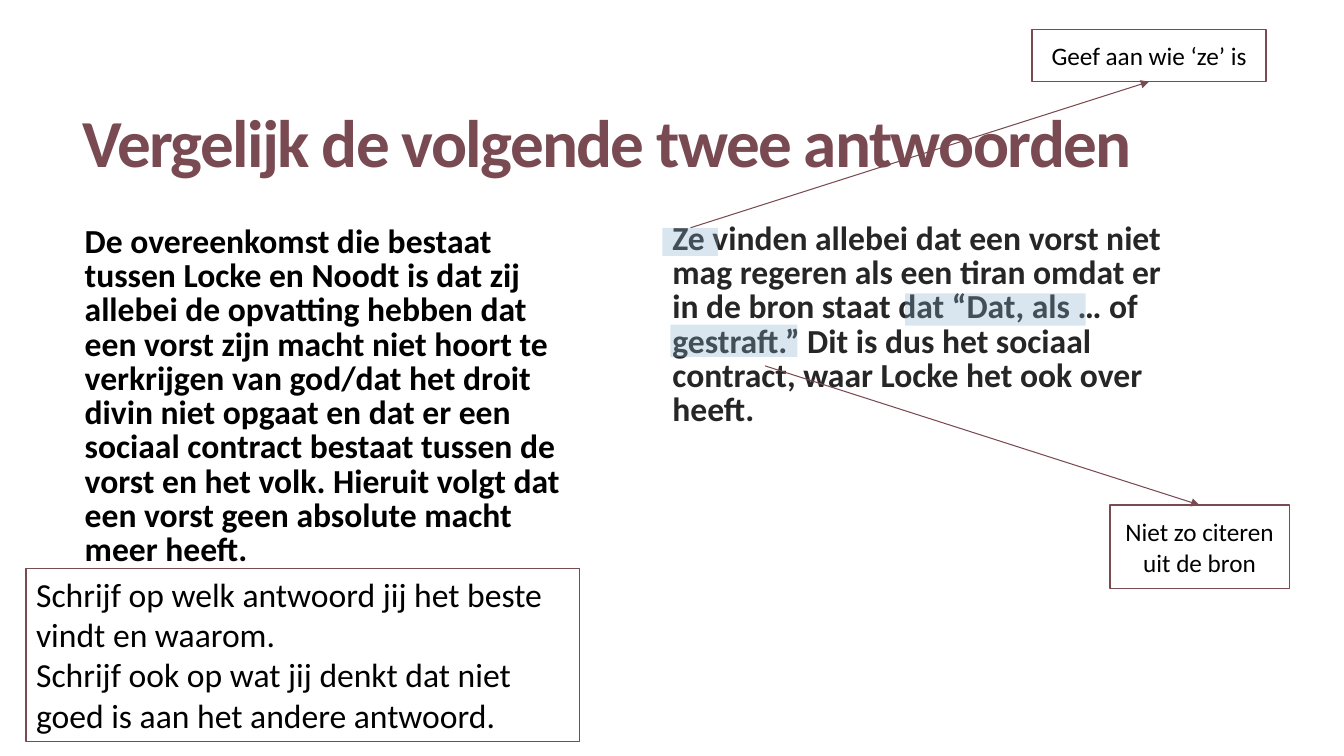
"""Build a slide that compares two pupil answers with teacher notes."""
from lxml import etree
from pptx import Presentation
from pptx.dml.color import RGBColor
from pptx.enum.shapes import MSO_CONNECTOR, MSO_SHAPE
from pptx.enum.text import MSO_ANCHOR, MSO_AUTO_SIZE, PP_ALIGN
from pptx.oxml.ns import qn
from pptx.util import Inches, Pt

RECTANGLE, STRAIGHT = MSO_SHAPE.RECTANGLE, MSO_CONNECTOR.STRAIGHT
TOP, MIDDLE = MSO_ANCHOR.TOP, MSO_ANCHOR.MIDDLE
LEFT, CENTER = PP_ALIGN.LEFT, PP_ALIGN.CENTER
NO_FIT = MSO_AUTO_SIZE.NONE
THEME = {
    "font": "Calibri", "accent": "794A51", "highlight": "83AECB", "paper": "FFFFFF",
    "ink": "000000", "soft_ink": "262626", "title": 48, "body": 24, "note": 18,
}

deck = Presentation()
deck.slide_width, deck.slide_height = Inches(13.333), Inches(7.5)
slide = deck.slides.add_slide(deck.slide_layouts[3])


def share(x, y, *size):
    """Turn percentages of the slide's width and height into lengths."""
    sides = (deck.slide_width, deck.slide_height) * 2
    return [round(side * part / 100) for side, part in zip(sides, (x, y, *size))]


def write(holder, *lines, size, color="ink", bold=False, align=LEFT, anchor=TOP,
          leading=None, tracking=0):
    """Fill a shape with formatted paragraphs."""
    frame = holder.text_frame
    frame.word_wrap, frame.auto_size, frame.vertical_anchor = True, NO_FIT, anchor
    frame.text = "\n".join(lines)
    for paragraph in frame.paragraphs:
        paragraph.alignment, paragraph.line_spacing = align, leading
        paragraph.space_before = Pt(0)
        properties = paragraph._p.get_or_add_pPr()
        properties.set("marL", "0")
        properties.set("indent", "0")
        etree.SubElement(properties, qn("a:buNone"))
        for run in paragraph.runs:
            font = run.font
            font.name, font.size, font.bold = THEME["font"], Pt(THEME[size]), bold
            font.color.rgb = RGBColor.from_string(THEME[color])
            if tracking:
                run._r.get_or_add_rPr().set("spc", str(tracking))


title, first_answer, second_answer = slide.placeholders
areas = [(5.4, 7.33, 88.35, 24.13), (5.55, 29.2, 38.25, 54.93), (49.28, 28.8, 38.25, 54.93)]
for holder, area in zip((title, first_answer, second_answer), areas):
    holder.left, holder.top, holder.width, holder.height = share(*area)

write(title, "Vergelijk de volgende twee antwoorden", size="title", color="accent",
      bold=True, anchor=MIDDLE, leading=0.85, tracking=-120)
write(first_answer,
      "De overeenkomst die bestaat tussen Locke en Noodt is dat zij allebei de opvatting "
      "hebben dat een vorst zijn macht niet hoort te verkrijgen van god/dat het droit divin "
      "niet opgaat en dat er een sociaal contract bestaat tussen de vorst en het volk. "
      "Hieruit volgt dat een vorst geen absolute macht meer heeft.",
      size="body", bold=True, leading=0.85)
write(second_answer,
      "Ze vinden allebei dat een vorst niet mag regeren als een tiran omdat er in de bron "
      "staat dat “Dat, als … of gestraft.” Dit is dus het sociaal contract, waar Locke het "
      "ook over heeft.",
      size="body", color="soft_ink", bold=True, leading=0.85)

highlights = [(49.28, 30.13, 4.13, 3.73), (67.35, 38.8, 13.43, 4.27), (49.88, 42.93, 9.45, 4.27)]
for area in highlights:
    marker = slide.shapes.add_shape(RECTANGLE, *share(*area))
    marker.shadow.inherit = False
    marker.fill.solid()
    marker.fill.fore_color.rgb = RGBColor.from_string(THEME["highlight"])
    tint = marker._element.spPr.find(".//" + qn("a:srgbClr"))
    etree.SubElement(tint, qn("a:alpha"), val="30000")
    marker.line.fill.background()

task = ["Schrijf op welk antwoord jij het beste vindt en waarom.",
        "Schrijf ook op wat jij denkt dat niet goed is aan het andere antwoord."]
boxes = [
    ((1.95, 75.2, 41.18, 22.93), task, {"size": "body"}),
    ((76.8, 3.87, 17.4, 6.93), ["Geef aan wie ‘ze’ is"],
     {"size": "note", "align": CENTER, "anchor": MIDDLE}),
    ((82.58, 66.8, 13.35, 11.07), ["Niet zo citeren uit de bron"],
     {"size": "note", "align": CENTER, "anchor": MIDDLE}),
]
for area, lines, style in boxes:
    box = slide.shapes.add_shape(RECTANGLE, *share(*area))
    box.shadow.inherit = False
    box.fill.solid()
    box.fill.fore_color.rgb = RGBColor.from_string(THEME["paper"])
    box.line.color.rgb = RGBColor.from_string(THEME["accent"])
    box.line.width = Pt(1)
    write(box, *lines, **style)

arrows = [((51.38, 30.13), (85.5, 10.8)), ((56.93, 48.4), (89.25, 66.8))]
for remark, note in arrows:
    arrow = slide.shapes.add_connector(STRAIGHT, *share(*remark), *share(*note))
    arrow.line.color.rgb = RGBColor.from_string(THEME["accent"])
    arrow.line.width = Pt(0.75)
    etree.SubElement(arrow.line._get_or_add_ln(), qn("a:tailEnd"), type="triangle")
    etree.SubElement(arrow._element.spPr, qn("a:effectLst"))

for leftover in list(slide.placeholders)[3:]:
    leftover._element.getparent().remove(leftover._element)

deck.save("out.pptx")
